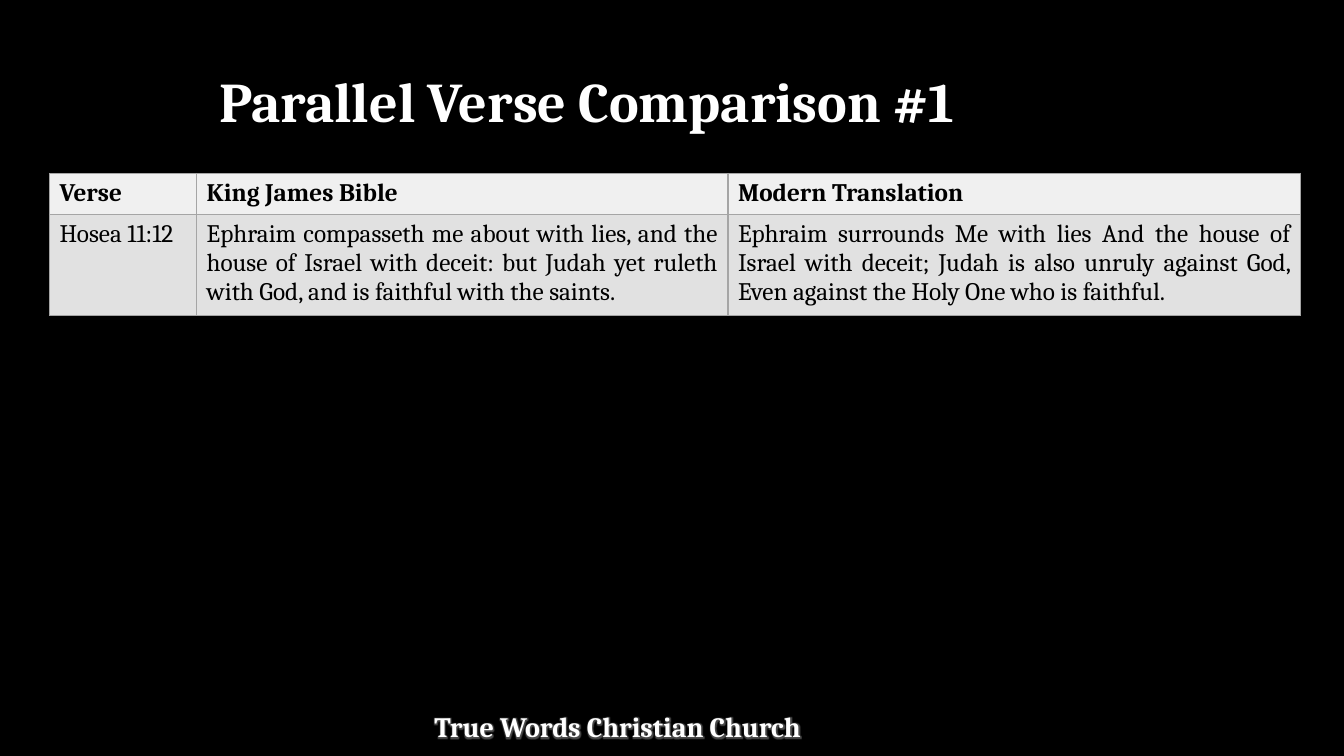
from lxml.etree import SubElement
from pptx import Presentation
from pptx.dml.color import RGBColor
from pptx.enum.text import PP_ALIGN
from pptx.oxml.ns import qn
from pptx.util import Inches, Pt

FONT = "Cambria"
BLACK, WHITE, BORDER, GLOW = "000000", "FFFFFF", "A5A5A5", "808080"
ROW_FILLS = ["F0F0F0", "E1E1E1"]

TITLE = "Parallel Verse Comparison #1"
CHURCH = "True Words Christian Church"
VERSES = [
    ("Verse", "King James Bible", "Modern Translation"),
    ("Hosea 11:12",
     "Ephraim compasseth me about with lies, and the house of Israel with deceit: "
     "but Judah yet ruleth with God, and is faithful with the saints.",
     "Ephraim surrounds Me with lies And the house of Israel with deceit; "
     "Judah is also unruly against God, Even against the Holy One who is faithful."),
]
COLUMN_WIDTHS = [1.46, 5.27, 5.68]
ROW_HEIGHTS = [0.41, 1.0]


def rgb(code):
    return RGBColor.from_string(code)


def add_run(paragraph, text, size, color, bold):
    run = paragraph.add_run()
    run.text = text
    run.font.size = Pt(size)
    run.font.name = FONT
    run.font.bold = bold
    run.font.color.rgb = rgb(color)
    return run


def add_line(slide, text, left, top, width, height, size):
    frame = slide.shapes.add_textbox(*map(Inches, (left, top, width, height))).text_frame
    frame.word_wrap = True
    return add_run(frame.paragraphs[0], text, size, WHITE, True)


def add_glow(run):
    properties = run.font._element
    effects = properties.makeelement(qn("a:effectLst"))
    properties.find(qn("a:solidFill")).addnext(effects)
    glow = SubElement(effects, qn("a:glow"), rad=str(Pt(4)))
    color = SubElement(glow, qn("a:srgbClr"), val=GLOW)
    SubElement(color, qn("a:alpha"), val="60000")


def add_borders(cell):
    properties = cell._tc.get_or_add_tcPr()
    for position, side in enumerate(("lnL", "lnR", "lnT", "lnB")):
        line = properties.makeelement(qn(f"a:{side}"), {"w": str(Pt(1))})
        properties.insert(position, line)
        SubElement(SubElement(line, qn("a:solidFill")), qn("a:srgbClr"), val=BORDER)


def add_verse_table(slide):
    table = slide.shapes.add_table(
        len(VERSES), len(COLUMN_WIDTHS), Inches(0.49), Inches(1.72),
        Inches(sum(COLUMN_WIDTHS)), Inches(sum(ROW_HEIGHTS))).table
    for column, width in zip(table.columns, COLUMN_WIDTHS):
        column.width = Inches(width)
    for r, (row, height) in enumerate(zip(table.rows, ROW_HEIGHTS)):
        row.height = Inches(height)
        for c, cell in enumerate(row.cells):
            cell.fill.solid()
            cell.fill.fore_color.rgb = rgb(ROW_FILLS[r])
            add_borders(cell)
            paragraph = cell.text_frame.paragraphs[0]
            if r and c:
                paragraph.alignment = PP_ALIGN.JUSTIFY
            add_run(paragraph, VERSES[r][c], 18, BLACK, r == 0)


def main():
    deck = Presentation()
    deck.slide_width, deck.slide_height = Inches(13.33), Inches(7.5)
    slide = deck.slides.add_slide(deck.slide_layouts[6])
    slide.background.fill.solid()
    slide.background.fill.fore_color.rgb = rgb(BLACK)

    add_glow(add_line(slide, CHURCH, 4.21, 6.99, 4.49, 0.44, 20))
    add_verse_table(slide)
    add_line(slide, TITLE, 2.08, 0.61, 8.75, 0.77, 40)
    deck.save("out.pptx")


if __name__ == "__main__":
    main()
